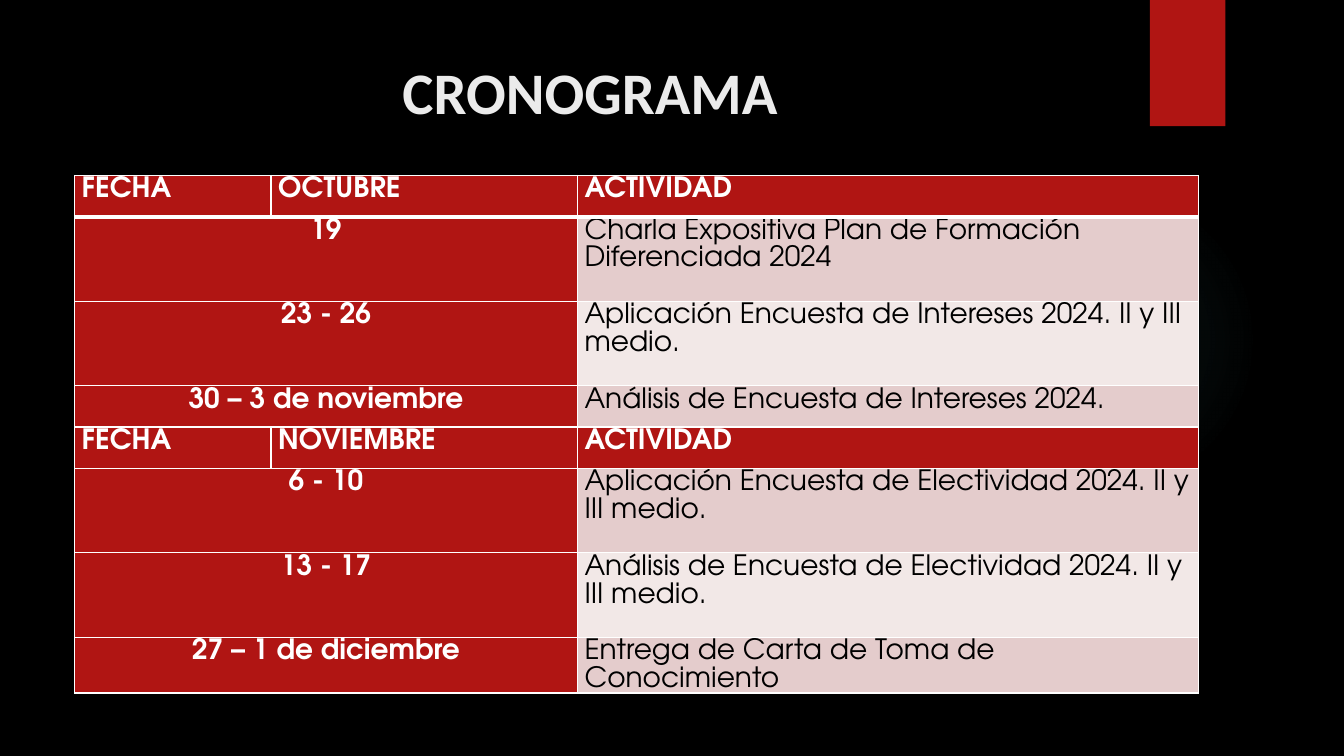
from lxml import etree
from pptx import Presentation
from pptx.dml.color import RGBColor
from pptx.enum.shapes import MSO_SHAPE as Shape
from pptx.enum.text import MSO_ANCHOR as Anchor, PP_ALIGN as Align
from pptx.oxml import parse_xml
from pptx.oxml.ns import nsdecls, qn
from pptx.util import Cm, Pt

COLORS = {
    "background": "000000", "red": "B01513", "white": "FFFFFF", "title": "EBEBEB",
    "black": "000000", "band_dark": "E4CCCC", "band_light": "F2E8E7", "glow": "50B9C1",
}
HEADING_FONT = "Calibri"
TABLE_FONT = "TeX Gyre Adventor"

COLUMN_WIDTHS = (4.95, 7.72, 15.65)
SHORT_ROW, TALL_ROW = 1.04, 2.13
SCHEDULE = {
    "OCTUBRE": [
        ("19", "Charla Expositiva Plan de Formación Diferenciada 2024", TALL_ROW),
        ("23 - 26", "Aplicación Encuesta de Intereses 2024. II y III medio.", TALL_ROW),
        ("30 – 3 de noviembre", "Análisis de Encuesta de Intereses 2024.", SHORT_ROW),
    ],
    "NOVIEMBRE": [
        ("6 - 10", "Aplicación Encuesta de Electividad 2024. II y III medio.", TALL_ROW),
        ("13 - 17", "Análisis de Encuesta de Electividad 2024. II y III medio.", TALL_ROW),
        ("27 – 1 de diciembre", "Entrega de Carta de Toma de Conocimiento", SHORT_ROW),
    ],
}


def rgb(color):
    return RGBColor.from_string(COLORS[color])


def write(frame, text, font=TABLE_FONT, size=20, color="white", bold=True,
          align=Align.LEFT, line_spacing=None, space_after=None):
    paragraph = frame.paragraphs[0]
    paragraph.alignment = align
    paragraph.line_spacing = line_spacing
    paragraph.space_after = space_after
    run = paragraph.add_run()
    run.text = text
    run.font.name, run.font.size, run.font.bold = font, Pt(size), bold
    run.font.color.rgb = rgb(color)


class SlideBuilder:
    def __init__(self, slide):
        self.slide = slide
        slide.background.fill.solid()
        slide.background.fill.fore_color.rgb = rgb("background")

    def shape(self, kind, left, top, width, height):
        shape = self.slide.shapes.add_shape(kind, Cm(left), Cm(top), Cm(width), Cm(height))
        shape.shadow.inherit = False
        shape.line.fill.background()
        return shape

    def glow(self, left, top, diameter):
        """Add a circle that fades out from its centre."""
        circle = self.shape(Shape.OVAL, left, top, diameter, diameter)
        stops = "".join(
            f'<a:gs pos="{position * 1000}"><a:srgbClr val="{COLORS["glow"]}">'
            f'<a:alpha val="{alpha * 1000}"/></a:srgbClr></a:gs>'
            for position, alpha in ((0, 7), (36, 6), (69, 0)))
        gradient = parse_xml(
            f'<a:gradFill {nsdecls("a")}><a:gsLst>{stops}</a:gsLst><a:path path="circle">'
            '<a:fillToRect l="50000" t="50000" r="50000" b="50000"/></a:path></a:gradFill>')
        circle._element.spPr.find(qn("a:prstGeom")).addnext(gradient)

    def ribbon(self, left, top, width, height):
        ribbon = self.shape(Shape.RECTANGLE, left, top, width, height)
        ribbon.fill.solid()
        ribbon.fill.fore_color.rgb = rgb("red")

    def title(self, text, left, top, width, height):
        title = self.slide.shapes.title
        title.left, title.top, title.width, title.height = map(Cm, (left, top, width, height))
        title.text_frame.vertical_anchor = Anchor.TOP
        write(title.text_frame, text, font=HEADING_FONT, size=42, color="title",
              align=Align.CENTER)

    def cell(self, cell, text, fill, top=1, bottom=1, **text_format):
        """Fill in one cell; top and bottom are border widths in points."""
        properties = cell._tc.get_or_add_tcPr()
        for side, width in (("L", 1), ("R", 1), ("T", top), ("B", bottom)):
            border = etree.SubElement(properties, qn(f"a:ln{side}"), w=str(Pt(width)))
            solid = etree.SubElement(border, qn("a:solidFill"))
            etree.SubElement(solid, qn("a:srgbClr"), val=COLORS["white"])
        cell.margin_left = cell.margin_right = Cm(0.18)
        cell.margin_top = cell.margin_bottom = 0
        cell.fill.solid()
        cell.fill.fore_color.rgb = rgb(fill)
        if text:
            write(cell.text_frame, text, line_spacing=1.07, space_after=Pt(8), **text_format)

    def schedule(self, months, left, top):
        row_count = sum(1 + len(entries) for entries in months.values())
        table = self.slide.shapes.add_table(
            row_count, len(COLUMN_WIDTHS), Cm(left), Cm(top),
            Cm(sum(COLUMN_WIDTHS)), Cm(row_count * SHORT_ROW)).table
        for column, width in zip(table.columns, COLUMN_WIDTHS):
            column.width = Cm(width)
        row = 0
        for month, entries in months.items():
            table.rows[row].height = Cm(SHORT_ROW)
            rule = 3 if row == 0 else 1
            for column, heading in enumerate(("FECHA", month, "ACTIVIDAD")):
                self.cell(table.cell(row, column), heading, "red", bottom=rule)
            for index, (date, activity, height) in enumerate(entries):
                row += 1
                table.rows[row].height = Cm(height)
                above = rule if index == 0 else 1
                date_cell, spare_cell, activity_cell = (table.cell(row, c) for c in range(3))
                date_cell.merge(spare_cell)
                self.cell(date_cell, date, "red", top=above, align=Align.CENTER)
                self.cell(spare_cell, "", "red", top=above)
                self.cell(activity_cell, activity, "band_light" if index % 2 else "band_dark",
                          top=above, color="black", bold=False)
            row += 1


def main():
    presentation = Presentation()
    presentation.slide_width, presentation.slide_height = Cm(33.87), Cm(19.05)
    title_only = presentation.slide_layouts[5]
    builder = SlideBuilder(presentation.slides.add_slide(title_only))
    builder.glow(23.9, 4.65, 7.82)
    builder.ribbon(28.98, 0, 1.9, 3.18)
    builder.title("CRONOGRAMA", 1.8, 1.27, 26.14, 3.89)
    builder.schedule(SCHEDULE, 1.88, 4.42)
    presentation.save("out.pptx")


if __name__ == "__main__":
    main()
